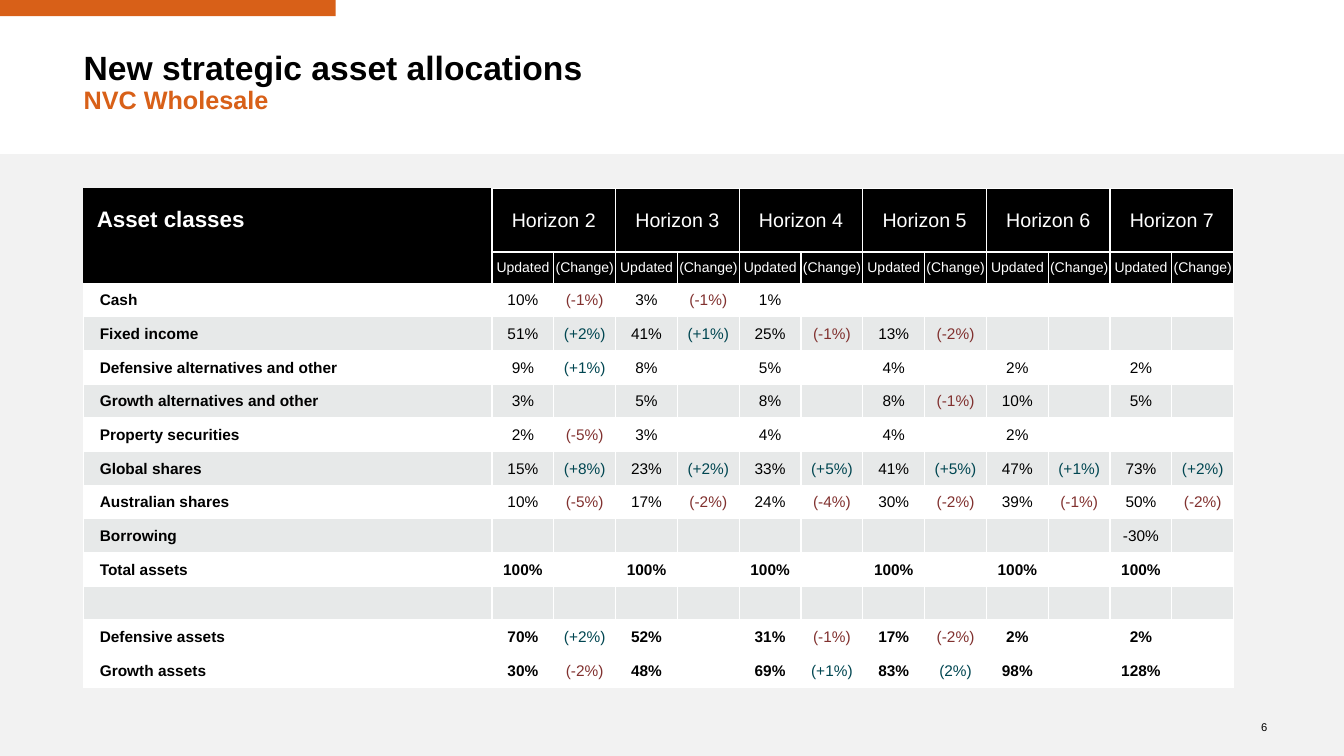
from lxml.etree import SubElement
from pptx import Presentation
from pptx.dml.color import RGBColor
from pptx.enum.shapes import MSO_SHAPE
from pptx.enum.text import MSO_ANCHOR, PP_ALIGN
from pptx.oxml.ns import qn
from pptx.util import Inches, Pt

FONT = "Arial"
BLACK, WHITE, ORANGE = "000000", "FFFFFF", "D86018"
PANEL, BAND, FALL, RISE = "F2F2F2", "E7E9E9", "81312F", "004651"

HORIZONS = [f"Horizon {n}" for n in range(2, 8)]
# Each asset class: updated weight and change for every horizon in turn
ALLOCATIONS = [
    ("Cash", "10% (-1%)", "3% (-1%)", "1%", "", "", ""),
    ("Fixed income", "51% (+2%)", "41% (+1%)", "25% (-1%)", "13% (-2%)", "", ""),
    ("Defensive alternatives and other", "9% (+1%)", "8%", "5%", "4%", "2%", "2%"),
    ("Growth alternatives and other", "3%", "5%", "8%", "8% (-1%)", "10%", "5%"),
    ("Property securities", "2% (-5%)", "3%", "4%", "4%", "2%", ""),
    ("Global shares", "15% (+8%)", "23% (+2%)", "33% (+5%)", "41% (+5%)",
     "47% (+1%)", "73% (+2%)"),
    ("Australian shares", "10% (-5%)", "17% (-2%)", "24% (-4%)", "30% (-2%)",
     "39% (-1%)", "50% (-2%)"),
    ("Borrowing", "", "", "", "", "", "-30%"),
    ("Total assets", "100%", "100%", "100%", "100%", "100%", "100%"),
    ("", "", "", "", "", "", ""),
    ("Defensive assets", "70% (+2%)", "52%", "31% (-1%)", "17% (-2%)", "2%", "2%"),
    ("Growth assets", "30% (-2%)", "48%", "69% (+1%)", "83% (2%)", "98%", "128%"),
]
BOLD_ROWS = ("Total assets", "Defensive assets", "Growth assets")


def rgb(color):
    return RGBColor.from_string(color)


def set_font(font, size, color=BLACK, bold=False):
    font.name, font.size, font.bold = FONT, Pt(size), bold
    font.color.rgb = rgb(color)


def clear_insets(tf):
    tf.margin_left = tf.margin_right = tf.margin_top = tf.margin_bottom = 0


def add_block(s, left, top, width, height, color):
    sp = s.shapes.add_shape(MSO_SHAPE.RECTANGLE, Inches(left), Inches(top),
                            Inches(width), Inches(height))
    sp.shadow.inherit = False
    sp.fill.solid()
    sp.fill.fore_color.rgb = rgb(color)
    sp.line.fill.background()


def set_title(s, title, subtitle):
    sp = s.shapes.title
    sp.left, sp.top, sp.width, sp.height = map(Inches, (0.83, 0.51, 9.76, 0.57))
    tf = sp.text_frame
    clear_insets(tf)
    tf.vertical_anchor = MSO_ANCHOR.TOP
    p = tf.paragraphs[0]
    p.alignment, p.line_spacing = PP_ALIGN.LEFT, 0.9
    r = p.add_run()
    r.text = title
    set_font(r.font, 24, bold=True)
    p.add_line_break()
    r = p.add_run()
    r.text = subtitle
    set_font(r.font, 18, ORANGE, bold=True)


def add_page_number(s, number):
    tf = s.shapes.add_textbox(Inches(12.29), Inches(7.11), Inches(0.28),
                              Inches(0.21)).text_frame
    clear_insets(tf)
    tf.word_wrap = False
    tf.vertical_anchor = MSO_ANCHOR.MIDDLE
    p = tf.paragraphs[0]
    p.text, p.alignment = number, PP_ALIGN.RIGHT
    set_font(p.font, 8)


def set_borders(cell, **colors):
    """Draw 1 pt borders, white unless a side (L, R, T, B) is given a colour."""
    tcPr = cell._tc.get_or_add_tcPr()
    for side in "LRTB":
        ln = SubElement(tcPr, qn(f"a:ln{side}"), w=str(Pt(1)))
        fill = SubElement(ln, qn("a:solidFill"))
        SubElement(fill, qn("a:srgbClr"), val=colors.get(side, WHITE))


def fill_cell(cell, text, fill, size=11, color=BLACK, bold=False,
              align=PP_ALIGN.CENTER, insets=(0.01, 0.01, 0.01, 0), **borders):
    set_borders(cell, **borders)
    cell.fill.solid()
    cell.fill.fore_color.rgb = rgb(fill)
    cell.vertical_anchor = MSO_ANCHOR.MIDDLE
    (cell.margin_left, cell.margin_top,
     cell.margin_right, cell.margin_bottom) = map(Inches, insets)
    p = cell.text_frame.paragraphs[0]
    p.text, p.alignment = text, align
    set_font(p.font, size, color, bold)


def fill_header(table):
    fill_cell(table.cell(0, 0), "Asset classes", BLACK, 16, WHITE, True,
              PP_ALIGN.LEFT, (0.13, 0.05, 0.13, 0.05), L=BLACK, T=BLACK, B=BLACK)
    fill_cell(table.cell(1, 0), "", BLACK, L=BLACK, T=BLACK)
    for i, horizon in enumerate(HORIZONS):
        col = 1 + 2 * i
        for j, label in enumerate(("Updated", "(Change)")):
            fill_cell(table.cell(0, col + j), "" if j else horizon, BLACK, 14, WHITE,
                      insets=(0.04, 0.05, 0.04, 0.05))
            fill_cell(table.cell(1, col + j), label, BLACK, 10, WHITE)
        table.cell(0, col).merge(table.cell(0, col + 1))


def fill_allocation(table, row, name, pairs, fill):
    fill_cell(table.cell(row, 0), name, fill, bold=True, align=PP_ALIGN.LEFT,
              insets=(0.16, 0.01, 0.01, 0))
    for i, pair in enumerate(pairs):
        updated, _, change = pair.partition(" ")
        col = 1 + 2 * i
        fill_cell(table.cell(row, col), updated, fill, bold=name in BOLD_ROWS)
        fill_cell(table.cell(row, col + 1), change, fill,
                  color=FALL if "-" in change else RISE)


def add_allocation_table(s):
    n_rows, n_cols = 2 + len(ALLOCATIONS), 1 + 2 * len(HORIZONS)
    width, height = 11.41, 4.95
    name_width, header_heights = 4.05, (0.63, 0.31)
    table = s.shapes.add_table(n_rows, n_cols, Inches(0.83), Inches(1.87),
                               Inches(width), Inches(height)).table
    table.first_row = table.horz_banding = False
    for i, column in enumerate(table.columns):
        column.width = Inches((width - name_width) / (n_cols - 1) if i else name_width)
    body_height = (height - sum(header_heights)) / len(ALLOCATIONS)
    for i, row in enumerate(table.rows):
        row.height = Inches(header_heights[i] if i < 2 else body_height)
    fill_header(table)
    last = len(ALLOCATIONS) - 1
    for i, (name, *pairs) in enumerate(ALLOCATIONS):
        banded = i % 2 and i != last
        fill_allocation(table, i + 2, name, pairs, BAND if banded else WHITE)


def main():
    prs = Presentation()
    prs.slide_width, prs.slide_height = Inches(13.33), Inches(7.5)
    s = prs.slides.add_slide(prs.slide_layouts[5])
    add_block(s, 0, 0, 3.33, 0.16, ORANGE)
    add_block(s, 0, 1.53, 13.33, 5.97, PANEL)
    set_title(s, "New strategic asset allocations", "NVC Wholesale")
    add_allocation_table(s)
    add_page_number(s, "6")
    prs.save("out.pptx")


if __name__ == "__main__":
    main()
